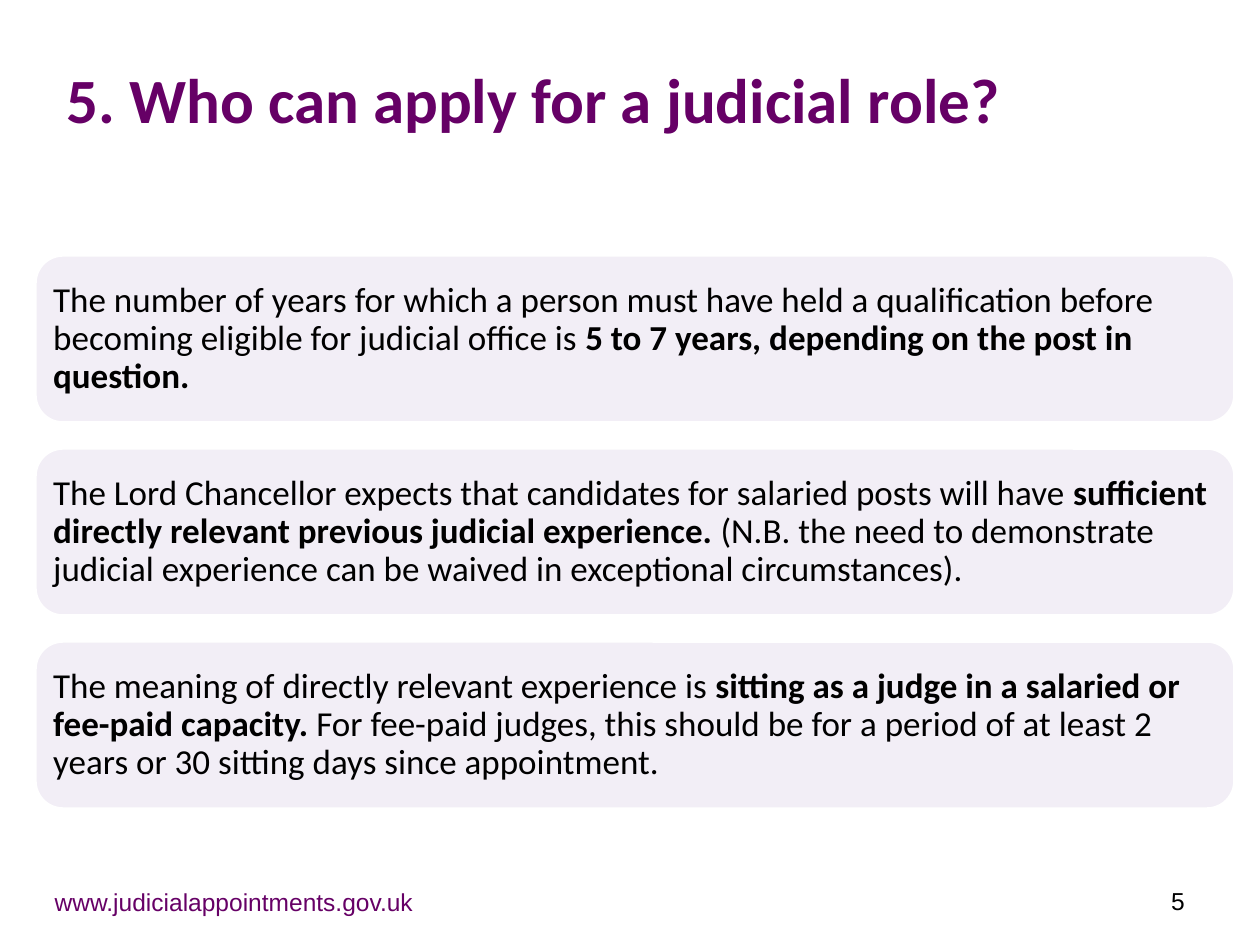
from pptx import Presentation
from pptx.dml.color import RGBColor
from pptx.enum.shapes import MSO_SHAPE
from pptx.enum.text import MSO_ANCHOR, PP_ALIGN
from pptx.util import Emu, Pt

EMU_PER_PX = 914400 / 126
COLORS = {"purple": "660066", "panel": "F2EEF6", "white": "FFFFFF", "black": "000000"}


def px(n):
    return Emu(round(n * EMU_PER_PX))


class Deck:
    heading_font = "Calibri"
    footer_font = "Arial"

    def __init__(self, width, height):
        self.prs = Presentation()
        self.prs.slide_width, self.prs.slide_height = px(width), px(height)
        self.s = self.prs.slides.add_slide(self.prs.slide_layouts[6])

    def color(self, name):
        return RGBColor.from_string(COLORS[name])

    def add_runs(self, sp, runs, font, size, color, align=PP_ALIGN.LEFT, spacing=1.0):
        tf = sp.text_frame
        tf.word_wrap = True
        tf.vertical_anchor = MSO_ANCHOR.MIDDLE
        p = tf.paragraphs[0]
        p.alignment = align
        p.line_spacing = spacing
        for text, bold in runs:
            r = p.add_run()
            r.text = text
            r.font.name = font
            r.font.size = Pt(size)
            r.font.bold = bold
            r.font.color.rgb = self.color(color)

    def text(self, box, runs, font, size, color, align=PP_ALIGN.LEFT):
        sp = self.s.shapes.add_textbox(*map(px, box))
        self.add_runs(sp, runs, font, size, color, align)

    def title(self, box, text):
        self.text(box, [(text, True)], self.heading_font, 36, "purple")

    def footer(self, box, text, color, align):
        self.text(box, [(text, False)], self.footer_font, 14, color, align)

    def panel(self, box, runs):
        sp = self.s.shapes.add_shape(MSO_SHAPE.ROUNDED_RECTANGLE, *map(px, box))
        sp.shadow.inherit = False
        sp.fill.solid()
        sp.fill.fore_color.rgb = self.color("panel")
        sp.line.color.rgb = self.color("white")
        sp.line.width = Pt(2)
        tf = sp.text_frame
        tf.margin_left = tf.margin_right = tf.margin_top = tf.margin_bottom = px(10)
        self.add_runs(sp, runs, self.heading_font, 20, "black", spacing=0.9)


PANELS = [
    [
        ("The number of years for which a person must have held a qualification before "
         "becoming eligible for judicial office is ", False),
        ("5 to 7 years, depending on the post in question.", True),
    ],
    [
        ("The Lord Chancellor expects that candidates for salaried posts will have ", False),
        ("sufficient directly relevant previous judicial experience. ", True),
        ("(N.B. the need to demonstrate judicial experience can be waived in "
         "exceptional circumstances).", False),
    ],
    [
        ("The meaning of directly relevant experience is ", False),
        ("sitting as a judge in a salaried or fee-paid capacity. ", True),
        ("For fee-paid judges, this should be for a period of at least 2 years or "
         "30 sitting days since appointment.", False),
    ],
]


def main():
    deck = Deck(1260, 945)
    deck.title((54, 38, 1167, 120), "5. Who can apply for a judicial role?")
    top, height, gap = 255, 168, 25
    for i, runs in enumerate(PANELS):
        deck.panel((35, top + i * (height + gap), 1200, height), runs)
    deck.footer((34, 869, 400, 66), "www.judicialappointments.gov.uk", "purple", PP_ALIGN.CENTER)
    deck.footer((903, 876, 294, 50), "5", "black", PP_ALIGN.RIGHT)
    deck.prs.save("out.pptx")


if __name__ == "__main__":
    main()
